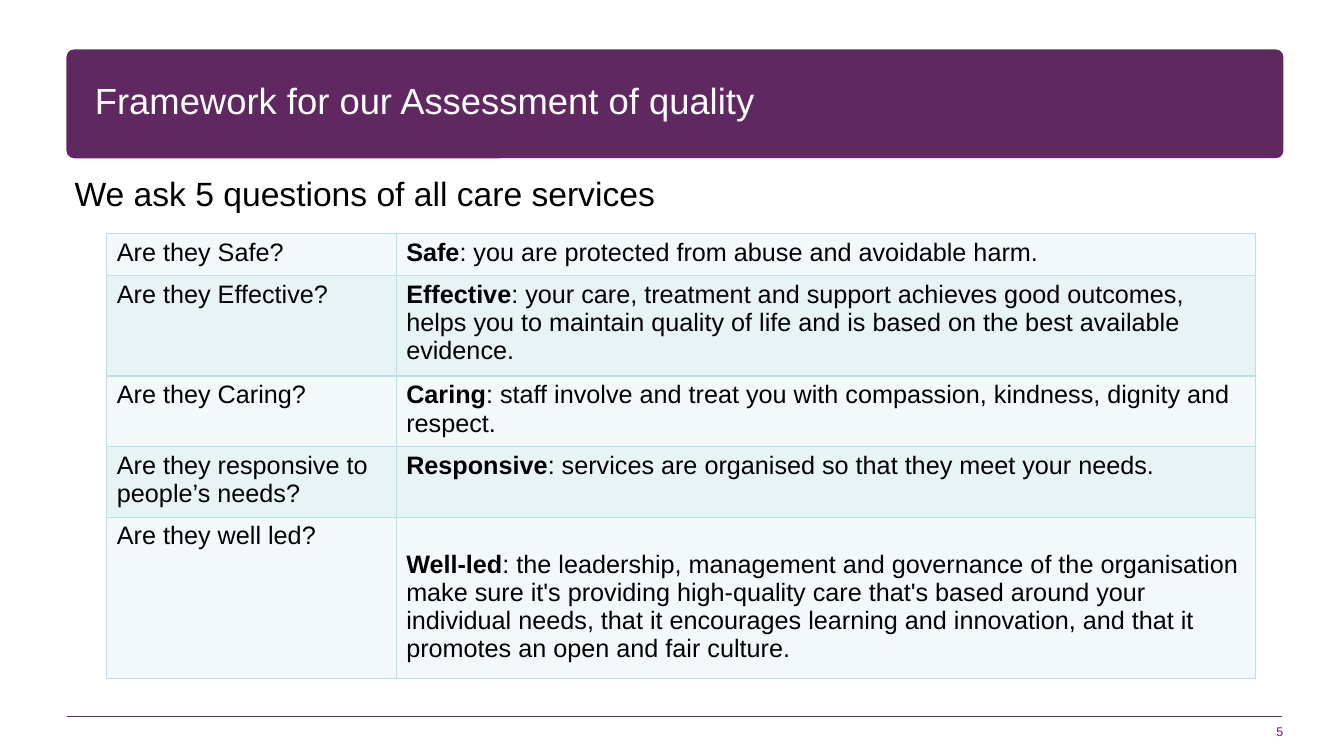
"""Build the slide on the five questions asked of care services."""
from pptx import Presentation
from pptx.dml.color import RGBColor as RGB
from pptx.enum.shapes import MSO_CONNECTOR as Link, MSO_SHAPE as Shape
from pptx.enum.text import MSO_ANCHOR as Anchor, MSO_AUTO_SIZE as Fit, PP_ALIGN as Align
from pptx.oxml import parse_xml
from pptx.oxml.ns import nsdecls
from pptx.util import Inches, Pt

TITLE = "Framework for our Assessment of quality"
LEAD = "We ask 5 questions of all care services"
PAGE = "5"
ROWS = [
    ("Are they Safe?", "Safe",
     ": you are protected from abuse and avoidable harm.", 0.41),
    ("Are they Effective?", "Effective",
     ": your care, treatment and support achieves good outcomes, helps you to "
     "maintain quality of life and is based on the best available evidence.", 1.0),
    ("Are they Caring?", "Caring",
     ": staff involve and treat you with compassion, kindness, dignity and respect.", 0.7),
    ("Are they responsive to people’s needs?", "Responsive",
     ": services are organised so that they meet your needs.", 0.7),
    ("Are they well led?", "Well-led",
     ": the leadership, management and governance of the organisation make sure it's "
     "providing high-quality care that's based around your individual needs, that it "
     "encourages learning and innovation, and that it promotes an open and fair culture.",
     1.6),
]
COLS = (2.87, 8.52)
LAST_TOP = 0.33
INK = {"plum": "5F2861", "white": "FFFFFF", "black": "000000",
       "edge": "BBE0E3", "pale": "F3F9FA", "tint": "E7F3F4"}


def color(name):
    return RGB.from_string(INK[name])


def box(*sides):
    return [Inches(side) for side in sides]


def write(para, text, size, ink, bold=False):
    run = para.add_run()
    run.text = text
    font = run.font
    font.name, font.size, font.bold = "Arial", Pt(size), bold
    font.color.rgb = color(ink)


def setup(frame, anchor):
    frame.word_wrap = True
    frame.auto_size = Fit.NONE
    frame.vertical_anchor = anchor
    frame.margin_left = frame.margin_right = 0
    frame.margin_top = frame.margin_bottom = 0
    return frame.paragraphs[0]


def border(cell):
    props = cell._tc.get_or_add_tcPr()
    for spot, side in enumerate("LRTB"):
        props.insert(spot, parse_xml(
            f'<a:ln{side} {nsdecls("a")} w="12700"><a:solidFill>'
            f'<a:srgbClr val="{INK["edge"]}"/></a:solidFill></a:ln{side}>'))


def add_frame(slide):
    bar = slide.shapes.add_shape(Shape.ROUNDED_RECTANGLE, *box(0.66, 0.49, 12.07, 1.08))
    bar.adjustments[0] = 0.07
    bar.shadow.inherit = False
    bar.fill.solid()
    bar.fill.fore_color.rgb = color("plum")
    bar.line.fill.background()
    slide.shapes._spTree.insert(2, bar._element)
    rule = slide.shapes.add_connector(Link.STRAIGHT, *box(12.72, 7.11, 0.66, 7.11))
    rule.line.color.rgb = color("plum")
    rule.line.width = Pt(1)
    rule._element.spPr.append(parse_xml(f'<a:effectLst {nsdecls("a")}/>'))


def add_words(slide):
    title = slide.shapes.title
    title.left, title.top, title.width, title.height = box(0.94, 0.53, 8.13, 0.99)
    para = setup(title.text_frame, Anchor.MIDDLE)
    para.alignment = Align.LEFT
    para.line_spacing = 0.85
    write(para, TITLE, 26, "white")
    lead = slide.shapes.add_textbox(*box(0.74, 1.72, 8.72, 0.4))
    write(setup(lead.text_frame, Anchor.TOP), LEAD, 24, "black")
    page = slide.shapes.add_textbox(*box(9.95, 6.83, 2.78, 0.5))
    para = setup(page.text_frame, Anchor.BOTTOM)
    para.alignment = Align.RIGHT
    write(para, PAGE, 9, "plum")


def add_grid(slide):
    high = sum(row[-1] for row in ROWS)
    grid = slide.shapes.add_table(
        len(ROWS), len(COLS), *box(1.06, 2.32, sum(COLS), high)).table
    grid.first_row = grid.horz_banding = False
    for col, width in zip(grid.columns, COLS):
        col.width = Inches(width)
    for num, (ask, name, text, tall) in enumerate(ROWS):
        grid.rows[num].height = Inches(tall)
        left, right = grid.rows[num].cells
        write(left.text_frame.paragraphs[0], ask, 18, "black")
        para = right.text_frame.paragraphs[0]
        write(para, name, 18, "black", True)
        write(para, text, 18, "black")
        for cell in (left, right):
            cell.fill.solid()
            cell.fill.fore_color.rgb = color("tint" if num % 2 else "pale")
            border(cell)
    right.margin_top = Inches(LAST_TOP)


def main():
    deck = Presentation()
    deck.slide_width, deck.slide_height = box(13.33, 7.5)
    slide = deck.slides.add_slide(deck.slide_layouts[5])
    add_frame(slide)
    add_words(slide)
    add_grid(slide)
    deck.save("out.pptx")


if __name__ == "__main__":
    main()
